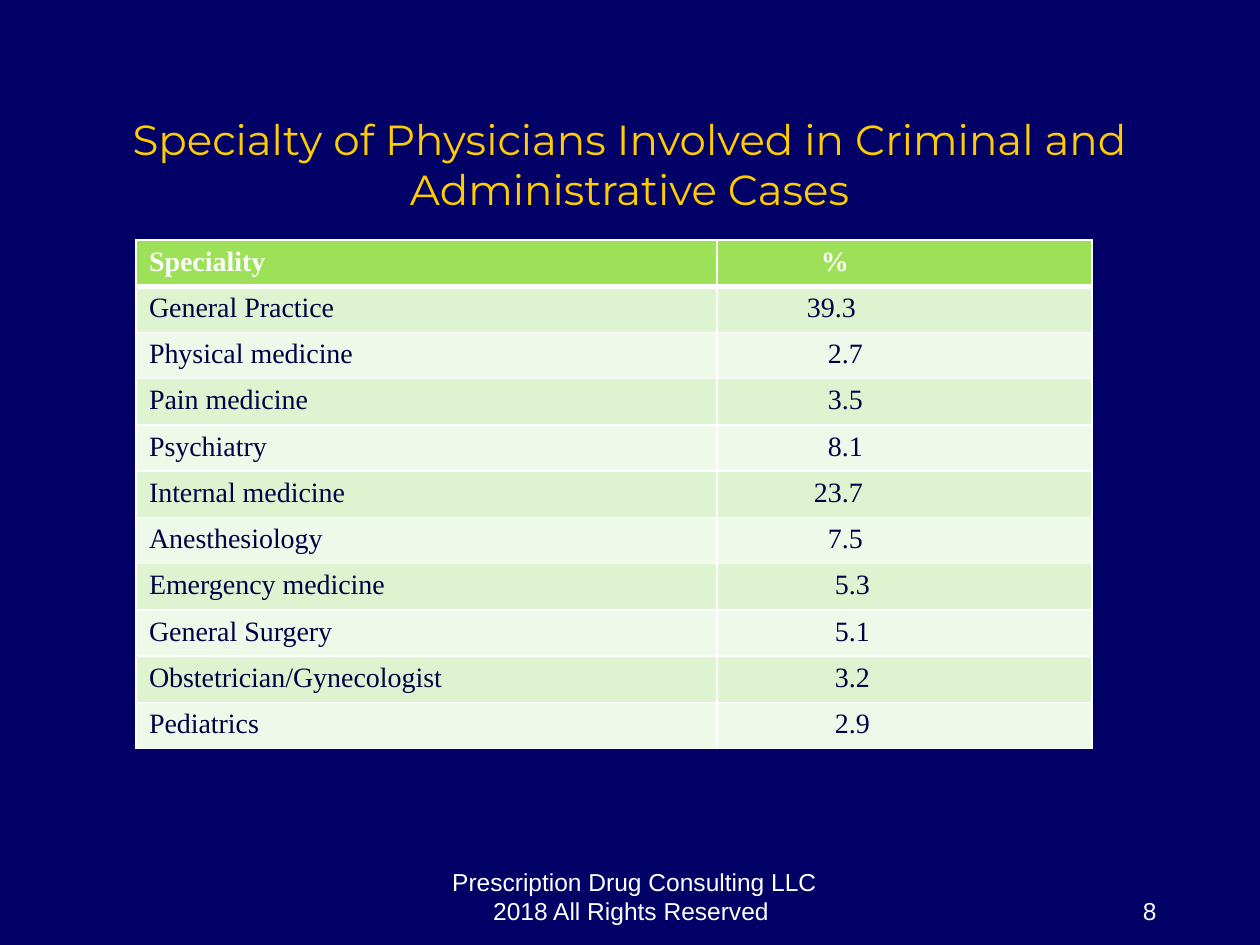
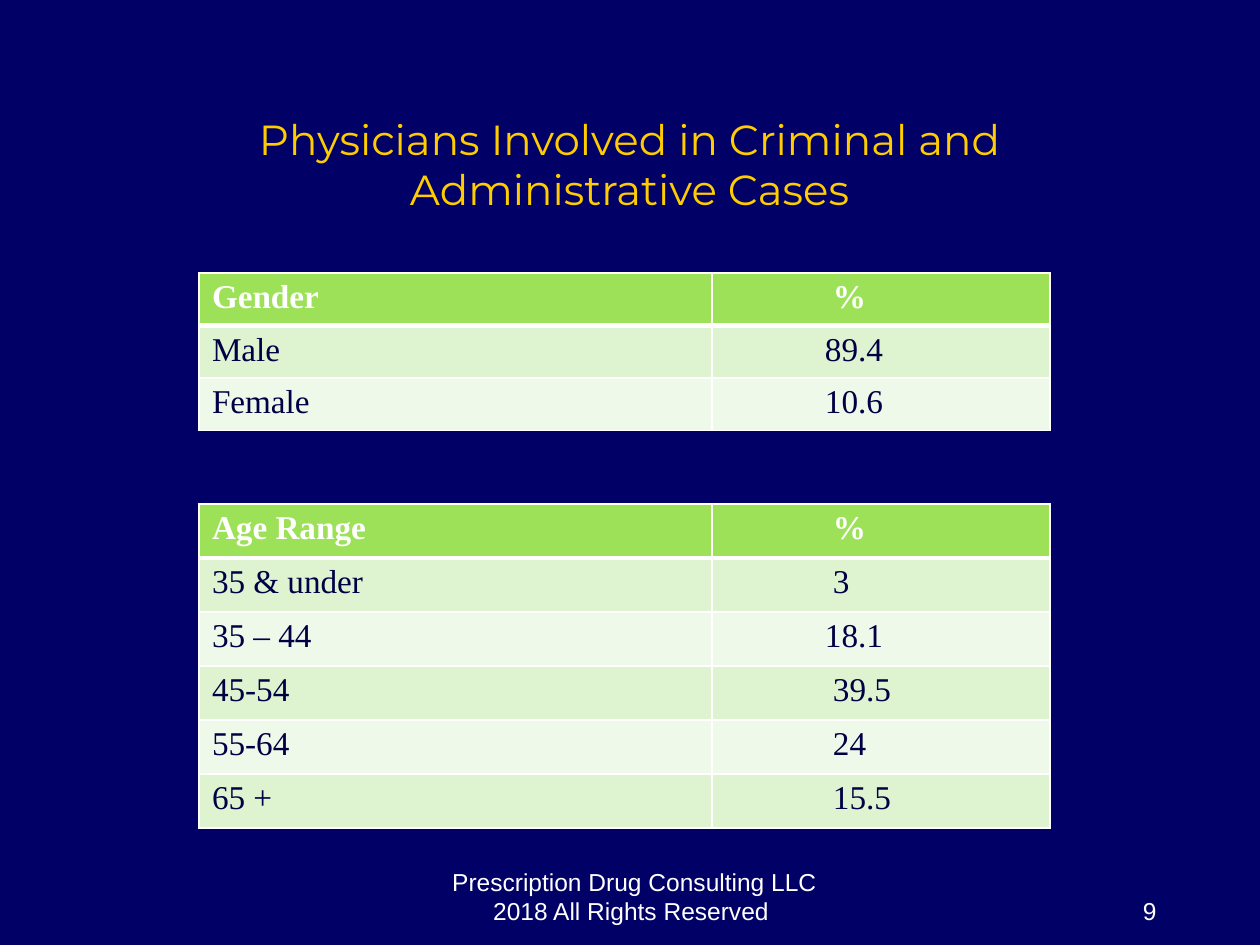
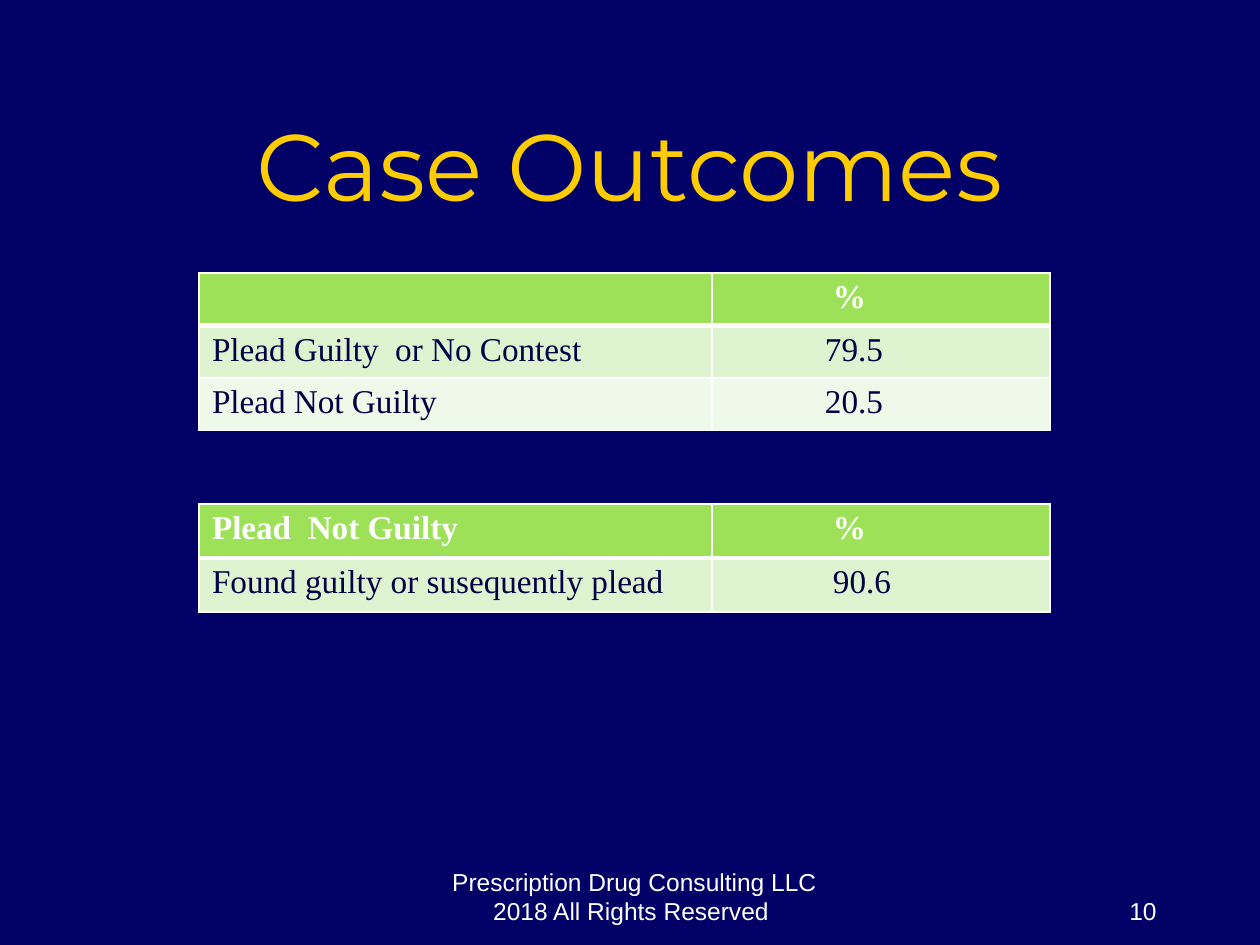
from dataclasses import dataclass

from lxml.etree import SubElement
from pptx import Presentation
from pptx.dml.color import RGBColor
from pptx.enum.text import MSO_ANCHOR, PP_ALIGN
from pptx.oxml.ns import qn
from pptx.util import Pt

EMU_PER_PX = 914400 / 126


def px(n):
    return round(n * EMU_PER_PX)


@dataclass(frozen=True)
class Theme:
    background: str = "000066"
    title: str = "FFCC00"
    light: str = "FFFFFF"
    dark: str = "000044"
    header: str = "9CE157"
    bands: tuple = ("DEF4D1", "EFF9EA")
    title_font: str = "Montserrat"
    table_font: str = "Times New Roman"
    footer_font: str = "Arial"
    title_size: int = 24
    big_title_size: int = 54
    table_size: int = 19
    small_table_size: int = 16
    footer_size: int = 14
    rule: int = 1
    header_rule: int = 3


THEME = Theme()
FOOTER = "Prescription Drug Consulting LLC 2018 All Rights Reserved "
FIRST_NUMBER = 8
INSET = 13


def write(tf, text, *, font, size, color, bold=False, align=PP_ALIGN.LEFT):
    p = tf.paragraphs[0]
    p.alignment = align
    if not text:
        p.font.size = Pt(size)
        return
    r = p.add_run()
    r.text = text
    r.font.name = font
    r.font.size = Pt(size)
    r.font.bold = bold
    r.font.color.rgb = RGBColor.from_string(color)


def set_borders(cell, color, **widths):
    """Draw cell edges; widths are points keyed by L, R, T and B."""
    tc_pr = cell._tc.get_or_add_tcPr()
    for side in "LRTB":
        ln = SubElement(tc_pr, qn(f"a:ln{side}"), w=str(Pt(widths[side])))
        fill = SubElement(ln, qn("a:solidFill"))
        SubElement(fill, qn("a:srgbClr"), val=color)


class Deck:
    def __init__(self, theme):
        self.theme = theme
        self.prs = Presentation()
        self.prs.slide_width, self.prs.slide_height = px(1260), px(945)
        fill = self.prs.slide_master.background.fill
        fill.solid()
        fill.fore_color.rgb = RGBColor.from_string(theme.background)
        self.s = None

    def slide(self, title, title_size=THEME.title_size):
        self.s = self.prs.slides.add_slide(self.prs.slide_layouts[6])
        t = self.theme
        self.text(title, 94, 106, 1071, 115, MSO_ANCHOR.MIDDLE, font=t.title_font,
                  size=title_size, color=t.title, align=PP_ALIGN.CENTER)
        number = FIRST_NUMBER + len(self.prs.slides) - 1
        self.footer(str(number), 907, 262, PP_ALIGN.RIGHT)
        self.footer(FOOTER, 435, 399, PP_ALIGN.CENTER)

    def text(self, text, x, y, w, h, anchor, **style):
        tf = self.s.shapes.add_textbox(px(x), px(y), px(w), px(h)).text_frame
        tf.word_wrap = True
        tf.vertical_anchor = anchor
        write(tf, text, **style)

    def footer(self, text, x, w, align):
        t = self.theme
        self.text(text, x, 869, w, 63, MSO_ANCHOR.BOTTOM, font=t.footer_font,
                  size=t.footer_size, color=t.light, align=align)

    def table(self, rows, x, y, cols, row_height, size=THEME.table_size):
        """Each row is (label, value, indent of the value in px); the first is the header."""
        frame = self.s.shapes.add_table(len(rows), len(cols), px(x), px(y),
                                        px(sum(cols)), px(row_height * len(rows)))
        table = frame.table
        table.horz_banding = False
        for col, width in zip(table.columns, cols):
            col.width = px(width)
        for i, (label, value, indent) in enumerate(rows):
            table.rows[i].height = px(row_height)
            for j, text in enumerate((label, value)):
                self.cell(table.cell(i, j), i, text, indent * j, size)

    def cell(self, cell, row, text, indent, size):
        t = self.theme
        is_header = row == 0
        set_borders(cell, t.light, L=t.rule, R=t.rule,
                    T=t.header_rule if row == 1 else t.rule,
                    B=t.header_rule if is_header else t.rule)
        cell.fill.solid()
        cell.fill.fore_color.rgb = RGBColor.from_string(
            t.header if is_header else t.bands[(row - 1) % 2])
        cell.margin_left = px(INSET + indent)
        write(cell.text_frame, text, font=t.table_font, size=size, bold=is_header,
              color=t.light if is_header else t.dark)


SPECIALTIES = [
    ("Speciality", "%", 91),
    ("General Practice", "39.3", 77),
    ("Physical medicine", "2.7", 98),
    ("Pain medicine", "3.5", 98),
    ("Psychiatry", "8.1", 98),
    ("Internal medicine", "23.7", 84),
    ("Anesthesiology", "7.5", 98),
    ("Emergency medicine", "5.3", 105),
    ("General Surgery", "5.1", 105),
    ("Obstetrician/Gynecologist", "3.2", 105),
    ("Pediatrics", "2.9", 105),
]
GENDERS = [("Gender", "%", 108), ("Male", "89.4", 100), ("Female", "10.6", 100)]
AGES = [
    ("Age Range", "%", 108),
    ("35 & under", "3", 108),
    ("35 – 44", "18.1", 100),
    ("45-54", "39.5", 108),
    ("55-64", "24", 108),
    ("65 +", "15.5", 108),
]
PLEAS = [
    ("", "%", 108),
    ("Plead Guilty  or No Contest", "79.5", 100),
    ("Plead Not Guilty", "20.5", 100),
]
VERDICTS = [
    ("Plead  Not Guilty", "%", 108),
    ("Found guilty or susequently plead", "90.6", 108),
]
UPPER = dict(x=199, y=273, cols=(513, 338), row_height=52)
LOWER = dict(x=199, y=504, cols=(513, 338), row_height=54)


def main():
    deck = Deck(THEME)

    deck.slide("Specialty of Physicians Involved in Criminal and Administrative Cases")
    deck.table(SPECIALTIES, x=136, y=240, cols=(581, 375), row_height=42,
               size=THEME.small_table_size)

    deck.slide("Physicians Involved in Criminal and Administrative Cases")
    deck.table(GENDERS, **UPPER)
    deck.table(AGES, **LOWER)

    deck.slide("Case Outcomes", THEME.big_title_size)
    deck.table(PLEAS, **UPPER)
    deck.table(VERDICTS, **LOWER)

    deck.prs.save("out.pptx")


if __name__ == "__main__":
    main()
